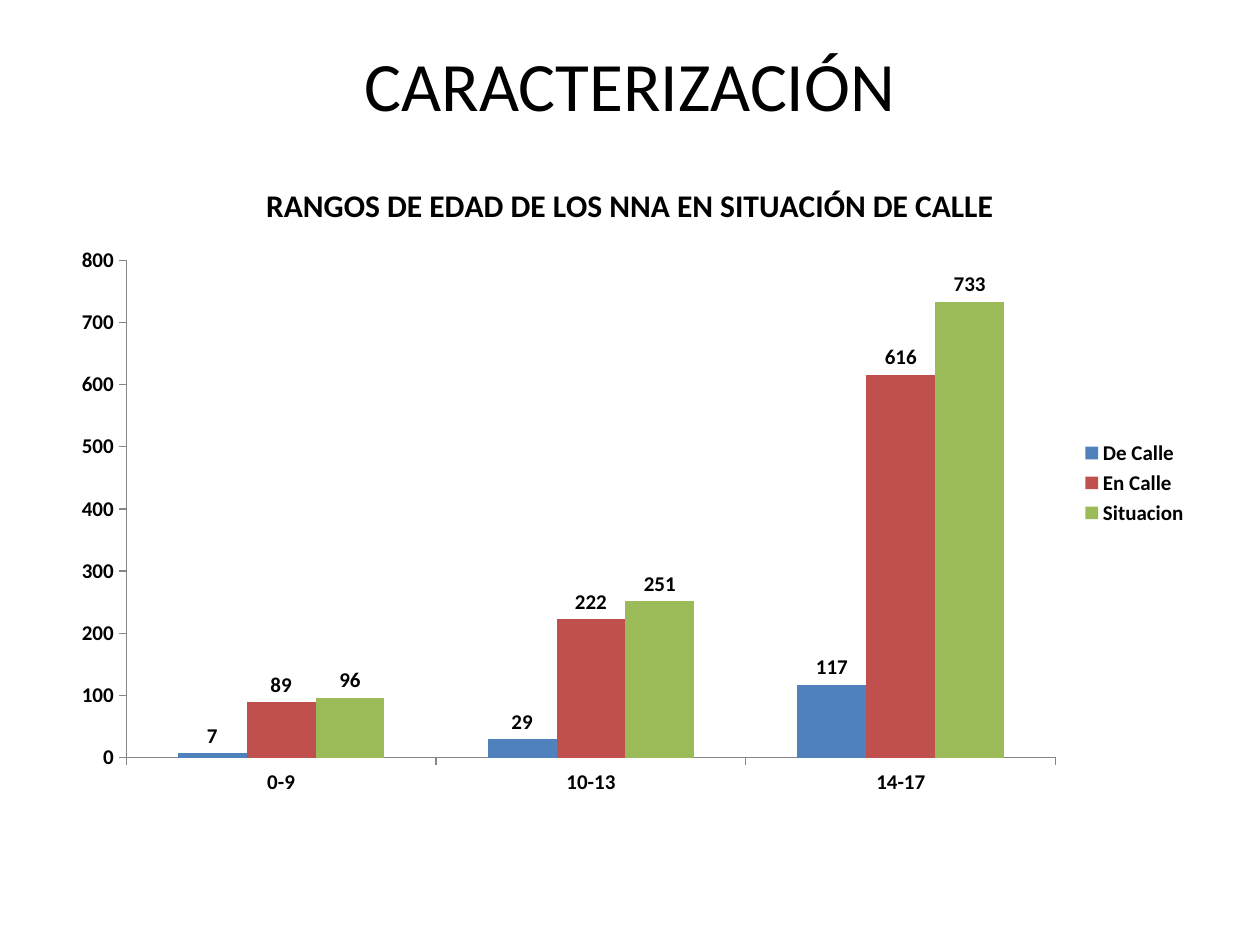
from pptx import Presentation
from pptx.chart.data import CategoryChartData
from pptx.dml.color import RGBColor
from pptx.enum.chart import XL_CHART_TYPE, XL_LABEL_POSITION, XL_LEGEND_POSITION, XL_TICK_MARK
from pptx.enum.text import MSO_ANCHOR, PP_ALIGN
from pptx.util import Pt

CLUSTERED = XL_CHART_TYPE.COLUMN_CLUSTERED
ABOVE_BAR = XL_LABEL_POSITION.OUTSIDE_END
LEGEND_RIGHT = XL_LEGEND_POSITION.RIGHT
TICK_OUTSIDE = XL_TICK_MARK.OUTSIDE
MIDDLE = MSO_ANCHOR.MIDDLE
CENTER = PP_ALIGN.CENTER

EMU_PER_PX = 914400 / 126
FONT = "Calibri"
COLORS = {
    "text": "000000",
    "axis": "868686",
    "De Calle": "4F81BD",
    "En Calle": "C0504D",
    "Situacion": "9BBB59",
}
AGE_RANGES = ["0-9", "10-13", "14-17"]
CHILDREN = {
    "De Calle": [7, 29, 117],
    "En Calle": [89, 222, 616],
    "Situacion": [96, 251, 733],
}


def px(length):
    return round(length * EMU_PER_PX)


def color(name):
    return RGBColor.from_string(COLORS[name])


def format_font(font, size, bold=False):
    font.name = FONT
    font.size = Pt(size)
    font.bold = bold
    font.color.rgb = color("text")


def write(frame, text, size, bold=False, align=CENTER):
    frame.text = text
    paragraph = frame.paragraphs[0]
    paragraph.alignment = align
    format_font(paragraph.runs[0].font, size, bold)


class SlideBuilder:
    def __init__(self, presentation):
        self.slide = presentation.slides.add_slide(presentation.slide_layouts[5])

    def title(self, text, left, top, width, height, size):
        heading = self.slide.shapes.title
        heading.left, heading.top = px(left), px(top)
        heading.width, heading.height = px(width), px(height)
        heading.text_frame.vertical_anchor = MIDDLE
        write(heading.text_frame, text, size)

    def column_chart(self, caption, categories, series, left, top, width, height):
        data = CategoryChartData(number_format="General")
        data.categories = categories
        for name, values in series.items():
            data.add_series(name, values)
        chart = self.slide.shapes.add_chart(
            CLUSTERED, px(left), px(top), px(width), px(height), data
        ).chart
        format_font(chart.font, 12, bold=True)
        chart.has_title = True
        write(chart.chart_title.text_frame, caption, 18, bold=True)
        chart.chart_title.include_in_layout = False
        chart.has_legend = True
        chart.legend.position = LEGEND_RIGHT
        chart.legend.include_in_layout = False

        for axis in (chart.category_axis, chart.value_axis):
            axis.has_major_gridlines = False
            axis.major_tick_mark = TICK_OUTSIDE
            axis.format.line.color.rgb = color("axis")
        chart.value_axis.minimum_scale = 0
        chart.value_axis.maximum_scale = 800
        chart.value_axis.major_unit = 100

        plot = chart.plots[0]
        plot.vary_by_categories = False
        plot.gap_width = 150
        plot.overlap = 0
        for group in plot.series:
            group.format.fill.solid()
            group.format.fill.fore_color.rgb = color(group.name)
            labels = group.data_labels
            labels.show_value = True
            labels.position = ABOVE_BAR
            format_font(labels.font, 12, bold=True)


def main():
    presentation = Presentation()
    presentation.slide_width = px(1260)
    presentation.slide_height = px(945)
    builder = SlideBuilder(presentation)
    builder.column_chart(
        "RANGOS DE EDAD DE LOS NNA EN SITUACIÓN DE CALLE",
        AGE_RANGES, CHILDREN, 59, 158, 1142, 650,
    )
    builder.title("CARACTERIZACIÓN", 63, 38, 1134, 91, size=39.6)
    presentation.save("out.pptx")


if __name__ == "__main__":
    main()
